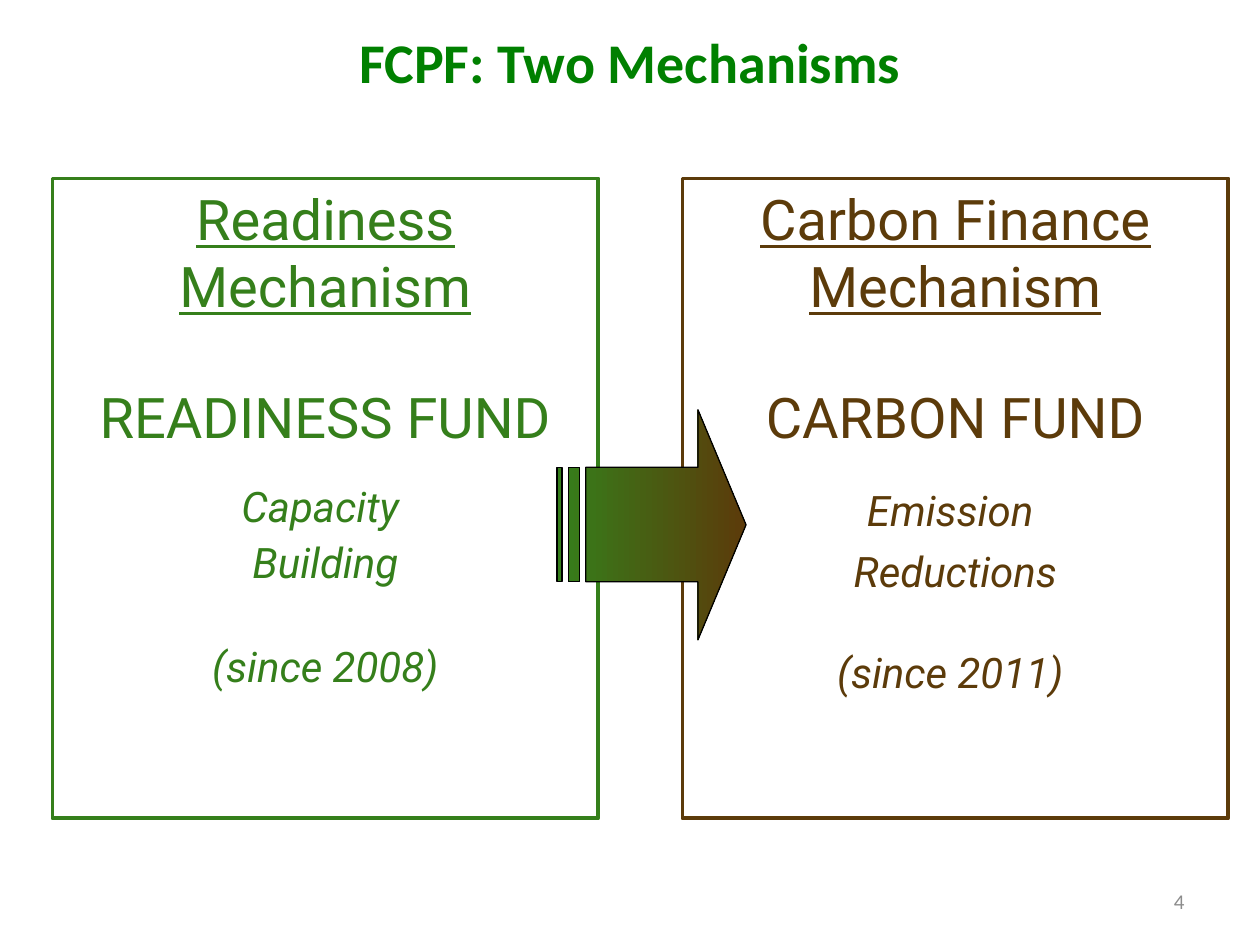
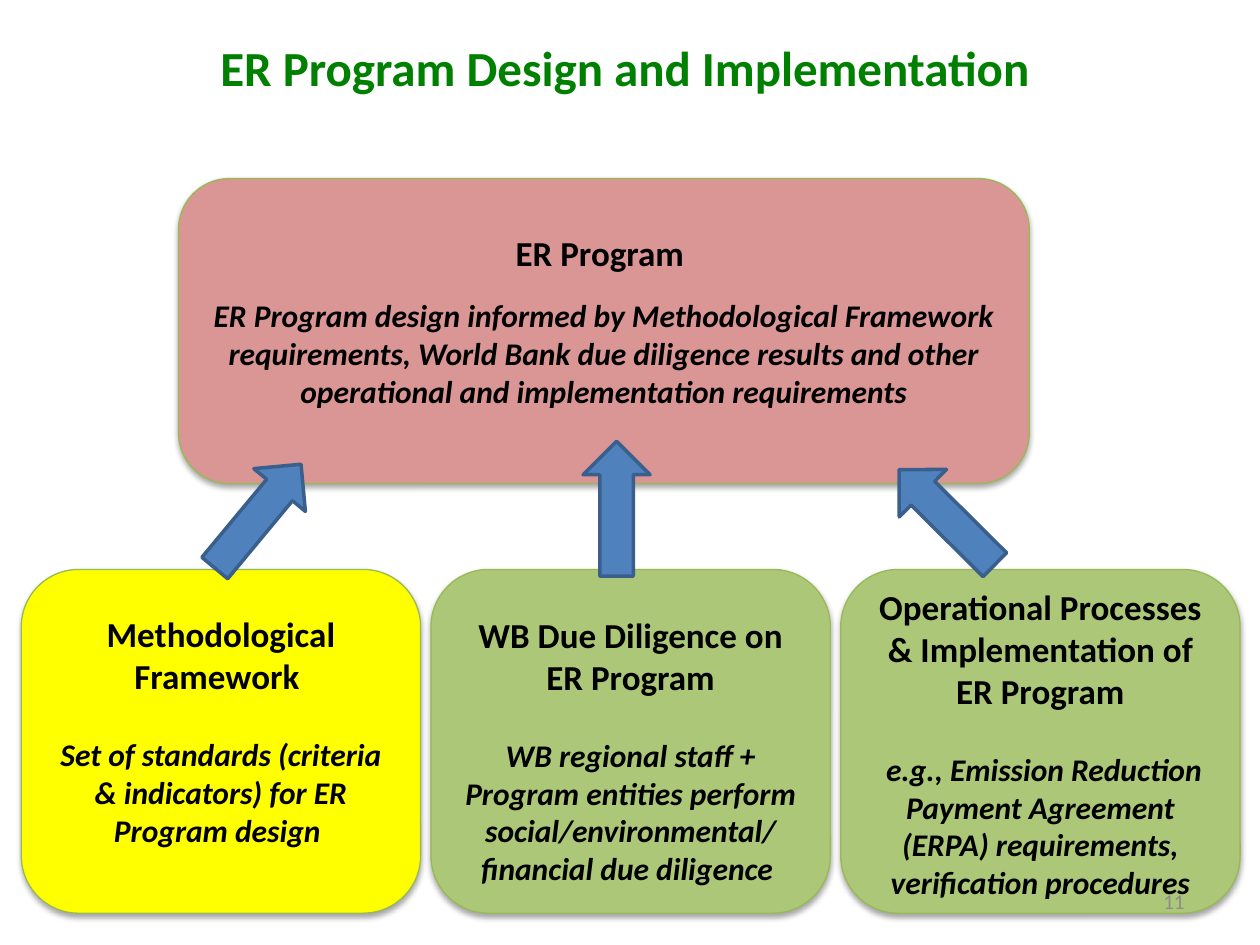
from dataclasses import dataclass, replace

from lxml import etree
from pptx import Presentation
from pptx import util as u
from pptx.dml.color import RGBColor
from pptx.enum import shapes as kinds, text as t
from pptx.oxml import ns

HUES = {
    "title": "008000", "green": "357F1B", "brown": "5C3B0A", "grey": "8C8C8C",
    "black": "000000", "yellow": "FFFF00", "pink": "D99694", "lime": "ACC777",
    "rim": "98B955", "blue": "4F81BD", "navy": "3A5F8C",
}
SANS, BODY = "Calibri", "Roboto"


@dataclass
class Box:
    x: float
    y: float
    w: float
    h: float

    def emu(self) -> list:
        return [u.Cm(v) for v in (self.x, self.y, self.w, self.h)]


@dataclass
class Line:
    text: str
    size: float
    gap: float = 0
    bold: bool = False
    slant: bool = False
    under: bool = False


@dataclass
class Panel:
    x: float
    hue: str
    lines: list


@dataclass
class Card:
    box: Box
    hue: str
    head: str
    note: str
    gap: float
    shift: float  # points the text sits below the middle


@dataclass
class Arrow:
    x: float
    y: float
    turn: float


def color(name: str) -> RGBColor:
    return RGBColor.from_string(HUES[name])


def write(shape, lines: list, font: str = SANS, hue: str = "black",
          align=t.PP_ALIGN.CENTER, anchor=t.MSO_ANCHOR.TOP, shift: float = 0) -> None:
    frame = shape.text_frame
    frame.word_wrap = True
    frame.vertical_anchor = anchor
    frame.margin_top = u.Pt(3.6 + max(2 * shift, 0))
    frame.margin_bottom = u.Pt(3.6 + max(-2 * shift, 0))
    for i, line in enumerate(lines):
        para = frame.add_paragraph() if i else frame.paragraphs[0]
        para.alignment = align
        if line.gap:
            para.space_before = u.Pt(line.gap)
        run = para.add_run()
        run.text = line.text
        face = run.font
        face.name, face.size = font, u.Pt(line.size)
        face.bold, face.italic, face.underline = line.bold, line.slant, line.under
        face.color.rgb = color(hue)


def label(slide, box: Box, line: Line, **style) -> None:
    write(slide.shapes.add_textbox(*box.emu()), [line], **style)


def paint(shape, rim: str, width: float, fill: str = "") -> None:
    shape.shadow.inherit = False
    if fill:
        shape.fill.solid()
        shape.fill.fore_color.rgb = color(fill)
    else:
        shape.fill.background()
    shape.line.color.rgb = color(rim)
    shape.line.width = u.Pt(width)


def title(slide, box: Box, text: str, size: float) -> None:
    label(slide, box, Line(text, size, bold=True), hue="title")


def number(slide, text: str) -> None:
    label(slide, Box(18.21, 17.65, 5.92, 1.02), Line(text, 12), hue="grey",
          align=t.PP_ALIGN.RIGHT, anchor=t.MSO_ANCHOR.MIDDLE)


def panel(slide, item: Panel) -> None:
    shape = slide.shapes.add_shape(kinds.MSO_SHAPE.RECTANGLE,
                                   *Box(item.x, 3.6, 11, 12.9).emu())
    paint(shape, item.hue, 2.25)
    write(shape, item.lines, font=BODY, hue=item.hue)


def shade(shape) -> None:
    effects = shape._element.spPr.find(ns.qn("a:effectLst"))
    outer = etree.SubElement(effects, ns.qn("a:outerShdw"), blurRad=str(u.Pt(3.1)),
                             dist=str(u.Pt(1.8)), dir="5400000", rotWithShape="0")
    tint = etree.SubElement(outer, ns.qn("a:srgbClr"), val=HUES["black"])
    etree.SubElement(tint, ns.qn("a:alpha"), val="35000")


def card(slide, item: Card) -> None:
    shape = slide.shapes.add_shape(kinds.MSO_SHAPE.ROUNDED_RECTANGLE, *item.box.emu())
    paint(shape, "rim", 0.75, item.hue)
    shade(shape)
    write(shape, [Line(item.head, 20, bold=True),
                  Line(item.note, 18, item.gap, bold=True, slant=True)],
          anchor=t.MSO_ANCHOR.MIDDLE, shift=item.shift)


def arrow(slide, item: Arrow) -> None:
    shape = slide.shapes.add_shape(kinds.MSO_SHAPE.RIGHT_ARROW,
                                   *Box(item.x, item.y, 2.72, 1.35).emu())
    paint(shape, "navy", 2, "blue")
    shape.rotation = item.turn


def striped(slide) -> None:
    """Block arrow with two bars at its tail."""
    top, low = 9.42, 11.73
    head = [(14.07, 8.26), (14.07, top), (11.81, top), (11.81, low),
            (14.07, low), (14.07, 12.9), (15.04, 10.58)]
    bars = [[(a, top), (a, low), (b, low), (b, top)]
            for a, b in ((11.46, 11.68), (11.23, 11.33))]
    pen = None
    for part in [head, *bars]:
        first, *rest = [(u.Cm(x), u.Cm(y)) for x, y in part]
        if pen is None:
            pen = slide.shapes.build_freeform(*first)
        else:
            pen.move_to(*first)
        pen.add_line_segments(rest, close=True)
    shape = pen.convert_to_shape()
    paint(shape, "black", 0.75)
    shape.fill.gradient()
    shape.fill.gradient_angle = 0
    for stop, hue, place in zip(shape.fill.gradient_stops, ("green", "brown"), (0, 1)):
        stop.color.rgb = color(hue)
        stop.position = place


# Content of the two mechanisms
TOP = Line("", 32, under=True)
FUND = Line("", 32, 36)
AIM = Line("", 24, slant=True)
PANELS = [
    Panel(1.06, "green", [
        replace(TOP, text="Readiness Mechanism"),
        replace(FUND, text="READINESS FUND"),
        replace(AIM, text="Capacity ", gap=18),
        replace(AIM, text="Building", gap=2.8),
        replace(AIM, text="(since 2008)", gap=31)]),
    Panel(13.76, "brown", [
        replace(TOP, text="Carbon Finance Mechanism"),
        replace(FUND, text="CARBON FUND"),
        replace(AIM, text="Emission ", gap=20),
        replace(AIM, text="Reductions", gap=6),
        replace(AIM, text="(since 2011) ", gap=29)]),
]

# Content of the programme design
BASE = [Box(0.43 + 8.26 * i, 11.48, 8.05, 6.93) for i in range(3)]
CARDS = [
    Card(BASE[0], "yellow", "Methodological Framework ",
         "Set of standards (criteria & indicators) for ER Program design ", 22, -6),
    Card(Box(3.6, 3.6, 17.15, 6.15), "pink", "ER Program ",
         "ER Program design informed by Methodological Framework requirements, "
         "World Bank due diligence results and other operational and "
         "implementation requirements", 12.8, -6),
    Card(BASE[1], "lime", "WB Due Diligence on ER Program",
         "WB regional staff + Program entities perform social/environmental/ "
         "financial due diligence ", 22, 5),
    Card(BASE[2], "lime", "Operational Processes & Implementation of ER Program",
         " e.g., Emission Reduction Payment Agreement (ERPA) requirements, "
         "verification procedures", 22, 1),
]
ARROWS = [Arrow(3.84, 9.73, 309.7), Arrow(17.73, 9.75, 224.8), Arrow(11.07, 9.58, 270)]


def main() -> None:
    deck = Presentation()
    deck.slide_width, deck.slide_height = u.Cm(25.4), u.Cm(19.05)
    blank = deck.slide_layouts[6]

    # Two mechanisms
    slide = deck.slides.add_slide(blank)
    title(slide, Box(0, 0.43, 25.4, 1.63), "FCPF: Two Mechanisms", 32)
    number(slide, "4")
    for item in PANELS:
        panel(slide, item)
    striped(slide)

    # Programme design
    slide = deck.slides.add_slide(blank)
    title(slide, Box(0.43, 0.64, 24.33, 1.7), "ER Program Design and Implementation", 28)
    for item in CARDS:
        card(slide, item)
    number(slide, "11")
    for item in ARROWS:
        arrow(slide, item)

    deck.save("out.pptx")


if __name__ == "__main__":
    main()
